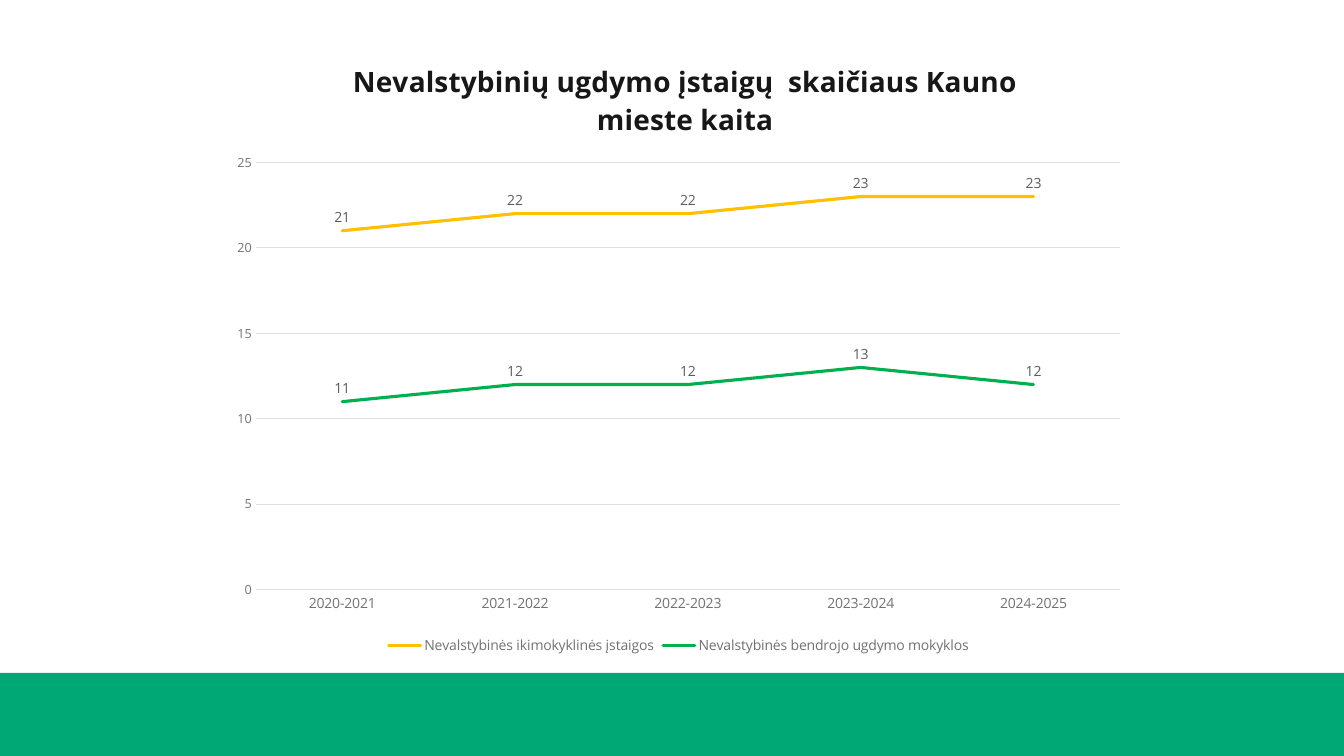
from dataclasses import dataclass

from pptx import Presentation
from pptx.chart.data import CategoryChartData
from pptx.dml.color import RGBColor as RGB
from pptx.enum.chart import (
    XL_CHART_TYPE as ChartType,
    XL_LABEL_POSITION as LabelPos,
    XL_LEGEND_POSITION as LegendPos,
    XL_TICK_MARK as Tick,
)
from pptx.enum.shapes import MSO_SHAPE as Shape
from pptx.enum.text import PP_ALIGN as Align
from pptx.oxml import parse_xml
from pptx.oxml.ns import nsdecls
from pptx.util import Inches, Pt


@dataclass(frozen=True)
class Theme:
    """Colours, font and type sizes of the slide."""

    font: str = "Open Sans"
    band: str = "00A875"
    title: str = "181717"
    text: str = "262626"
    axis: str = "727272"
    label: str = "5C5C5C"
    grid: str = "DEDEDE"
    preschools: str = "FFC000"
    schools: str = "00B050"
    title_size: float = 20
    body_size: float = 10
    scale_size: float = 9
    thin: float = 0.75
    thick: float = 2.25


THEME = Theme()
WIDTH, HEIGHT = Inches(13.33), Inches(7.5)
TITLE = "Nevalstybinių ugdymo įstaigų  skaičiaus Kauno mieste kaita"
YEARS = [f"{year}-{year + 1}" for year in range(2020, 2025)]
SERIES = [
    ("Nevalstybinės ikimokyklinės įstaigos", (21, 22, 22, 23, 23), THEME.preschools),
    ("Nevalstybinės bendrojo ugdymo mokyklos", (11, 12, 12, 13, 12), THEME.schools),
]


def share(left, top, width, height):
    """Turn shares of the slide's size into lengths."""
    return [int(part * full) for part, full in
            zip((left, top, width, height), (WIDTH, HEIGHT) * 2)]


def style_font(font, size, color, bold=False):
    """Give a font the theme's face with a size and colour."""
    font.name = THEME.font
    font.size = Pt(size)
    font.bold = bold
    font.color.rgb = RGB.from_string(color)


def style_line(line, color, width):
    """Give a line its colour and width."""
    line.color.rgb = RGB.from_string(color)
    line.width = Pt(width)


def manual_layout(target=None, **parts):
    """Build a chart layout from shares of the chart's size."""
    inner = f'<c:layoutTarget val="{target}"/>' if target else ""
    inner += "".join(f'<c:{axis}Mode val="edge"/>' for axis in "xy")
    inner += "".join(f'<c:{key} val="{value}"/>' for key, value in parts.items())
    return parse_xml(f'<c:layout {nsdecls("c")}><c:manualLayout>{inner}'
                     "</c:manualLayout></c:layout>")


def add_band(slide):
    """Draw the green band along the foot of the slide."""
    s = slide.shapes.add_shape(Shape.RECTANGLE, *share(0, 0.89, 1, 0.11))
    s.shadow.inherit = False
    s.fill.solid()
    s.fill.fore_color.rgb = RGB.from_string(THEME.band)
    s.line.fill.background()


def add_title(chart):
    """Write the chart title above the plot."""
    chart.has_title = True
    title = chart.chart_title
    title.include_in_layout = False
    p = title.text_frame.paragraphs[0]
    p.alignment = Align.CENTER
    r = p.add_run()
    r.text = TITLE
    style_font(r.font, THEME.title_size, THEME.title, bold=True)
    for layout in title._element.findall(f"{{{title._element.nsmap['c']}}}layout"):
        title._element.remove(layout)
    title._element.tx.addnext(manual_layout(x=0.14, y=0.04))


def style_axes(chart):
    """Set the scale, gridlines and fonts of both axes."""
    years, scale = chart.category_axis, chart.value_axis
    for axis, size in ((years, THEME.body_size), (scale, THEME.scale_size)):
        axis.major_tick_mark = axis.minor_tick_mark = Tick.NONE
        style_font(axis.tick_labels.font, size, THEME.axis)
    style_line(years.format.line, THEME.grid, THEME.thin)
    scale.format.line.fill.background()
    scale.minimum_scale, scale.maximum_scale, scale.major_unit = 0, 25, 5
    scale.has_major_gridlines = True
    style_line(scale.major_gridlines.format.line, THEME.grid, THEME.thin)


def style_series(series, color):
    """Draw one series as a plain line with values above it."""
    series.smooth = False
    style_line(series.format.line, color, THEME.thick)
    series.format.line._get_or_add_ln().set("cap", "rnd")
    labels = series.data_labels
    labels.show_value = True
    labels.position = LabelPos.ABOVE
    labels.number_format = "#,##0"
    labels.number_format_is_linked = False
    style_font(labels.font, THEME.body_size, THEME.label)


def add_line_chart(slide):
    """Add the chart of institutions by school year."""
    data = CategoryChartData()
    data.categories = YEARS
    for name, values, _ in SERIES:
        data.add_series(name, values)
    frame = slide.shapes.add_chart(
        ChartType.LINE, *share(0.163, 0.037, 0.684, 0.835), data)
    chart = frame.chart
    style_font(chart.font, THEME.body_size, THEME.text)
    add_title(chart)
    style_axes(chart)
    chart.plots[0].vary_by_categories = False
    for series, (_, _, color) in zip(chart.plots[0].series, SERIES):
        style_series(series, color)
    chart.has_legend = True
    chart.legend.position = LegendPos.BOTTOM
    chart.legend.include_in_layout = False
    style_font(chart.legend.font, THEME.body_size, THEME.axis)
    area = chart._chartSpace.chart.plotArea
    for layout in area.findall(f"{{{area.nsmap['c']}}}layout"):
        area.remove(layout)
    area.insert(0, manual_layout("inner", x=0.04, y=0.213, w=0.94, h=0.677))


def main():
    """Build the slide and save it."""
    prs = Presentation()
    prs.slide_width, prs.slide_height = WIDTH, HEIGHT
    slide = prs.slides.add_slide(prs.slide_layouts[6])
    add_band(slide)
    add_line_chart(slide)
    prs.save("out.pptx")


if __name__ == "__main__":
    main()
